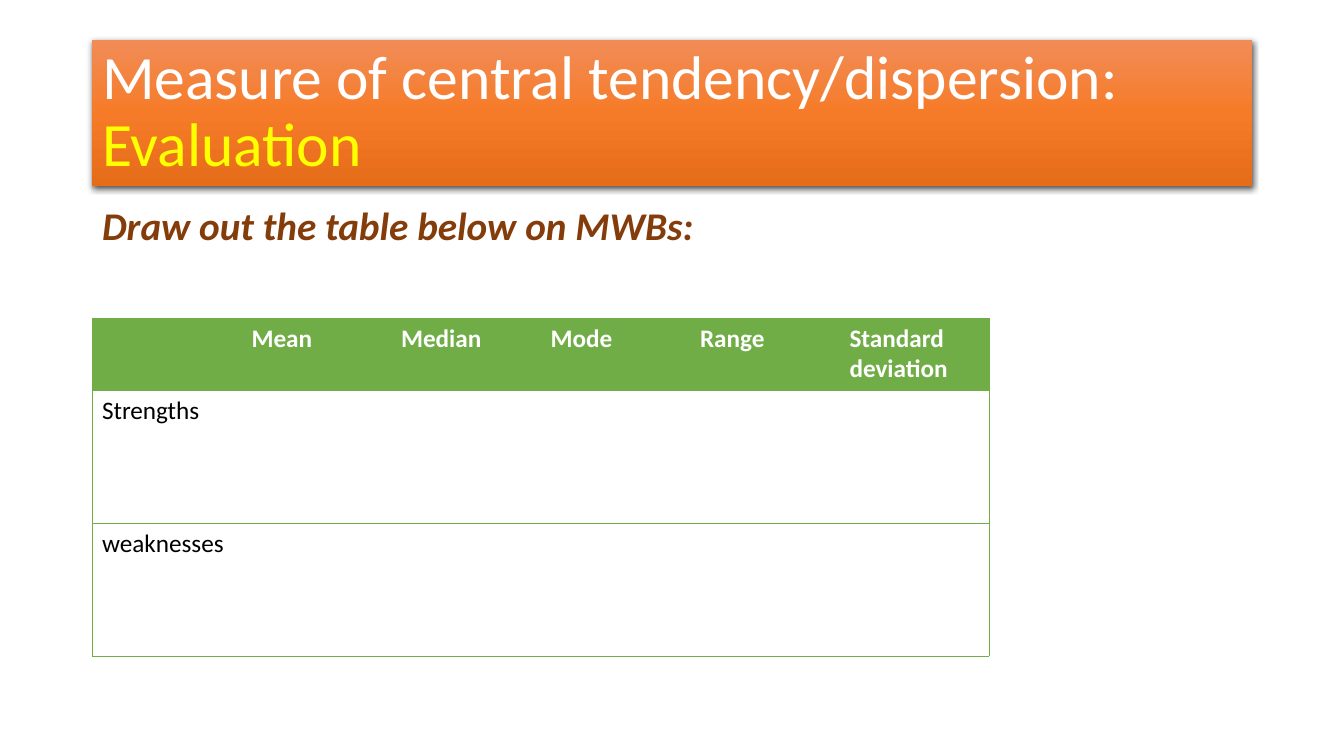
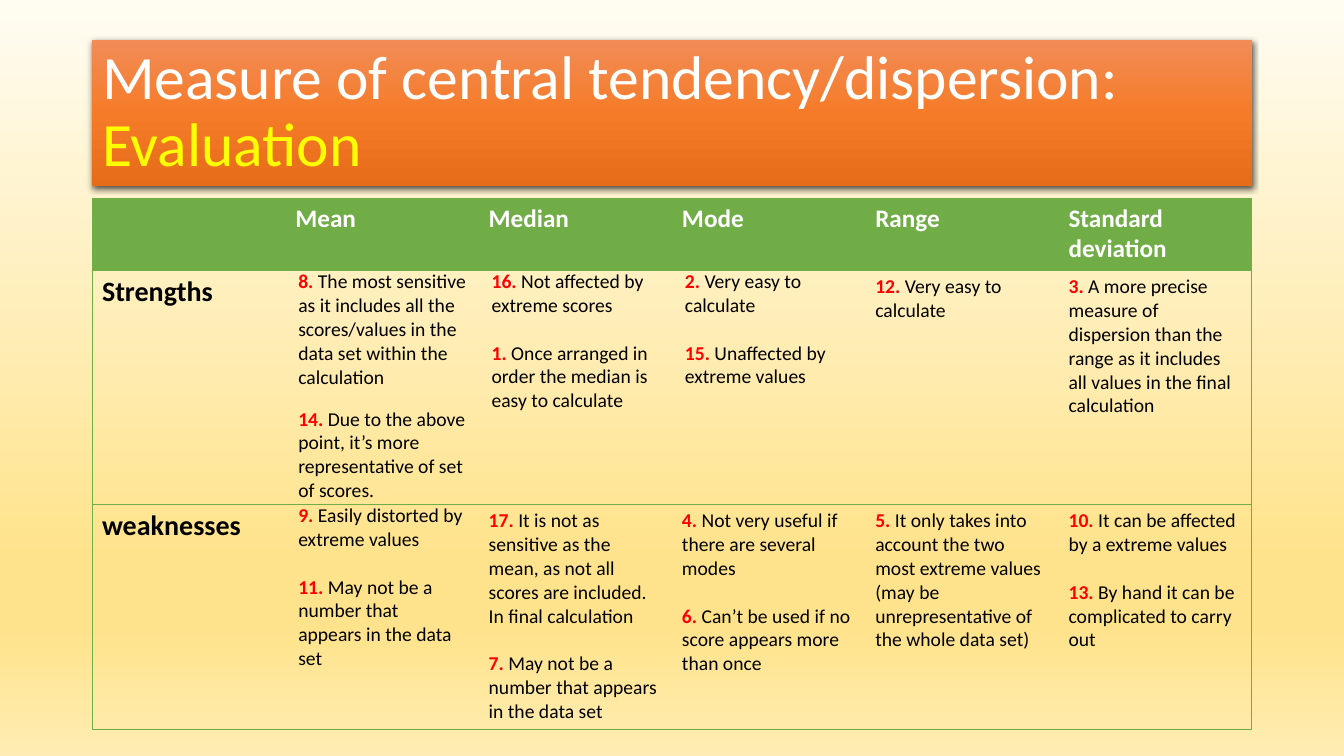
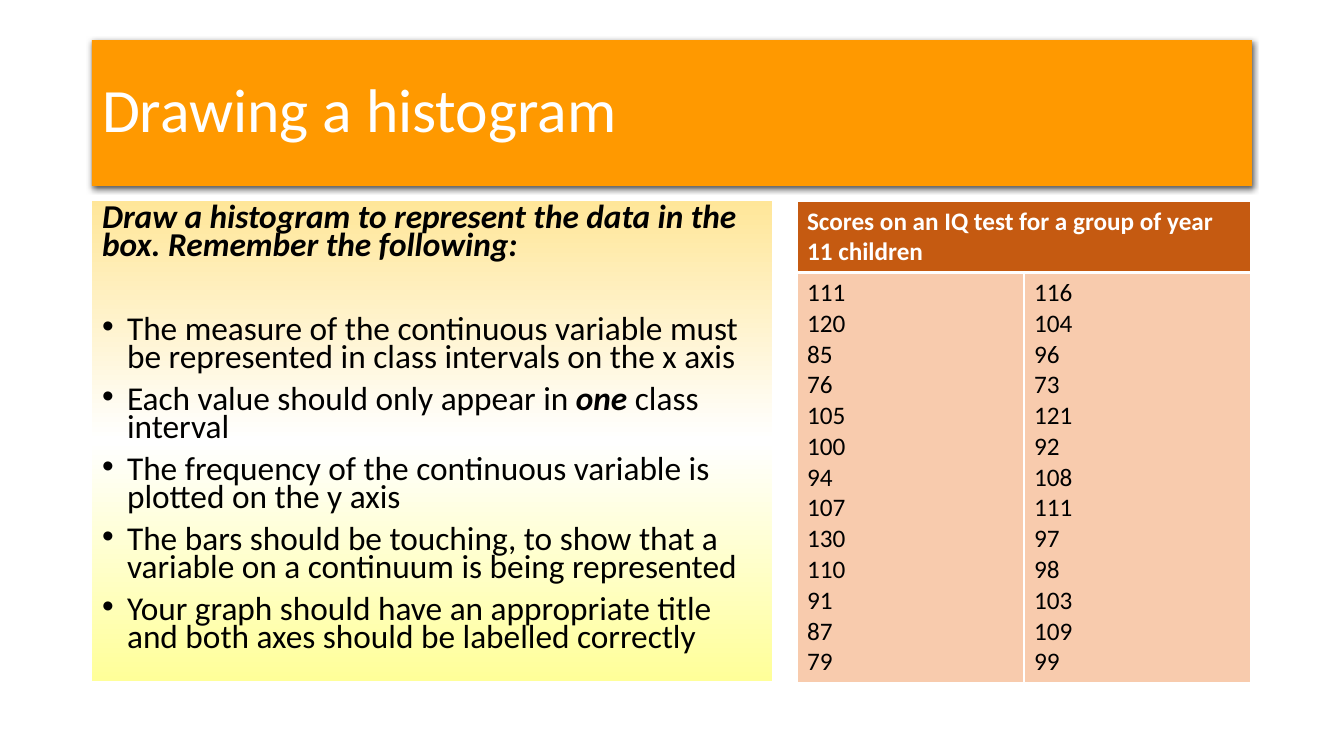
from pptx import Presentation
from pptx import util as u
from pptx.dml.color import RGBColor
from pptx.enum import text as t
from pptx.oxml import parse_xml
from pptx.oxml.ns import nsdecls, qn

PX = 914400 / 100.8
LEFT, WIDE = 92, 1160
WHITE = RGBColor(0xFF, 0xFF, 0xFF)
BLACK = RGBColor(0x00, 0x00, 0x00)
YELLOW = RGBColor(0xFF, 0xFF, 0x00)
RED = RGBColor(0xFF, 0x00, 0x00)
BROWN = RGBColor(0x84, 0x3C, 0x0B)
GREEN = RGBColor(0x70, 0xAD, 0x47)
AMBER = RGBColor(0xFF, 0x99, 0x00)
RUST = RGBColor(0xC5, 0x5A, 0x11)
PEACH = RGBColor(0xF8, 0xCB, 0xAD)
BAND = [(0, RGBColor(0xF1, 0x8C, 0x57)), (50, RGBColor(0xF6, 0x7B, 0x28)),
        (100, RGBColor(0xE5, 0x6C, 0x19))]
CREAM = [(0, RGBColor(0xFF, 0xFC, 0xF2)), (74, RGBColor(0xFF, 0xE3, 0x8C)),
         (83, RGBColor(0xFF, 0xE3, 0x8C)), (100, RGBColor(0xFF, 0xEC, 0xB2))]
LEMON = [(0, RGBColor(0xFF, 0xE6, 0x99)), (50, WHITE),
         (100, RGBColor(0xFF, 0xFF, 0x99))]

TOPIC = "Measure of central tendency/dispersion: "
HEADS = ["Mean", "Median", "Mode", "Range", "Standard deviation"]
SIDES = ["Strengths", "weaknesses"]
POINTS = [
    [
        (8, 13, ["8. The most sensitive as it includes all the scores/values "
                 "in the data set within the calculation",
                 "14. Due to the above point, it’s more representative of "
                 "set of scores."]),
        (8, 17, ["16. Not affected by extreme scores",
                 "1. Once arranged in order the median is easy to calculate"]),
        (8, 17, ["2. Very easy to calculate",
                 "15. Unaffected by extreme values"]),
        (None, 17, ["12. Very easy to calculate"]),
        (None, 17, ["3. A more precise measure of dispersion than the range as "
                    "it includes all values in the final calculation"]),
    ],
    [
        (14, 17, ["9. Easily distorted by extreme values",
                  "11. May not be a number that appears in the data set"]),
        (None, 17, ["17. It is not as sensitive as the mean, as not all scores "
                    "are included. In final calculation",
                    "7. May not be a number that appears in the data set"]),
        (None, 17, ["4. Not very useful if there are several modes",
                    "6. Can’t be used if no score appears more than once"]),
        (None, 17, ["5. It only takes into account the two most extreme values "
                    "(may be unrepresentative of the whole data set)"]),
        (None, 17, ["10. It can be affected by a extreme values",
                    "13. By hand it can be complicated to carry out"]),
    ],
]
RULES = [
    ["The measure of the continuous variable must be represented in class "
     "intervals on the x axis"],
    ["Each value should only appear in ", "one ", "class interval"],
    ["The frequency of the continuous variable is plotted on the y axis"],
    ["The bars should be touching, to show that a variable on a continuum is "
     "being represented"],
    ["Your graph should have an appropriate title and both axes should be "
     "labelled correctly"],
]
SCORES = [
    [111, 120, 85, 76, 105, 100, 94, 107, 130, 110, 91, 87, 79],
    [116, 104, 96, 73, 121, 92, 108, 111, 97, 98, 103, 109, 99],
]


def px(n):
    return u.Emu(round(n * PX))


def write(para, words, size=18, color=BLACK, bold=False, italic=False):
    run = para.add_run()
    run.text = words
    font = run.font
    font.name = "Calibri"
    font.size = u.Pt(size)
    font.color.rgb = color
    font.bold = bold
    font.italic = italic


def place(shape, left, top, width, height):
    shape.left, shape.top = px(left), px(top)
    shape.width, shape.height = px(width), px(height)
    shape.text_frame.auto_size = t.MSO_AUTO_SIZE.NONE


def fill(frame, items):
    for n, item in enumerate(items):
        yield frame.add_paragraph() if n else frame.paragraphs[0], item


def solid(item, color):
    item.fill.solid()
    item.fill.fore_color.rgb = color


def blend(item, stops):
    item.fill.gradient()
    item.fill.gradient_angle = 270
    ramp = next(item._element.iter(qn("a:gsLst")))
    for old in list(ramp):
        ramp.remove(old)
    for at, color in stops:
        ramp.append(parse_xml(
            f'<a:gs {nsdecls("a")} pos="{at * 1000}">'
            f'<a:srgbClr val="{color}"/></a:gs>'))


def shade(shape):
    shape._element.spPr.append(parse_xml(
        f'<a:effectLst {nsdecls("a")}><a:outerShdw blurRad="57150" '
        'dist="19050" dir="5400000" algn="ctr" rotWithShape="0">'
        '<a:srgbClr val="000000"><a:alpha val="63000"/></a:srgbClr>'
        '</a:outerShdw></a:effectLst>'))


def head(slide, words, accent=None):
    shape = slide.shapes.title
    place(shape, LEFT, 40, WIDE, 146)
    if accent:
        blend(shape, BAND)
    else:
        solid(shape, AMBER)
    shade(shape)
    shape.text_frame.vertical_anchor = t.MSO_ANCHOR.MIDDLE
    para = shape.text_frame.paragraphs[0]
    para.alignment = t.PP_ALIGN.LEFT
    para.line_spacing = 0.9
    write(para, words, size=44, color=WHITE)
    if accent:
        write(para, accent, size=44, color=YELLOW)


def style(para, space, before=10, bullet=False):
    para.line_spacing = space
    para.space_before = u.Pt(before)
    props = para._p.get_or_add_pPr()
    inset = px(25) if bullet else 0
    props.set("marL", str(inset))
    props.set("indent", str(-inset))
    mark = '<a:buChar {} char="•"/>' if bullet else "<a:buNone {}/>"
    props.append(parse_xml(mark.format(nsdecls("a"))))


def edge(cell, color, **sides):
    props = cell._tc.get_or_add_tcPr()
    names = [name for name in "LRTB" if name in sides]
    for spot, name in enumerate(names):
        width = u.Pt(sides[name])
        props.insert(spot, parse_xml(
            f'<a:ln{name} {nsdecls("a")} w="{width}"><a:solidFill>'
            f'<a:srgbClr val="{color}"/></a:solidFill></a:ln{name}>'))


def table(slide, left, top, width, rows, cols):
    frame = slide.shapes.add_table(
        len(rows), cols, px(left), px(top), px(width), px(sum(rows)))
    grid = frame.table
    plain = next(frame._element.iter(qn("a:tableStyleId")))
    plain.text = "{2D5ABB26-0587-4C30-8999-92F81FD0307C}"
    for row, height in zip(grid.rows, rows):
        row.height = px(height)
    for col in grid.columns:
        col.width = px(width / cols)
    return grid


def chart(slide, top, width, rows, **label):
    grid = table(slide, LEFT, top, width, rows, len(HEADS) + 1)
    last = len(HEADS)
    for r in range(len(rows)):
        for c in range(last + 1):
            cell = grid.cell(r, c)
            sides = {"T": 0.5, "B": 0.5}
            if c == 0:
                sides["L"] = 0.5
            if c == last:
                sides["R"] = 0.5
            if r == 0:
                solid(cell, GREEN)
            else:
                cell.fill.background()
            edge(cell, GREEN, **sides)
    for c, words in enumerate(HEADS, 1):
        para = grid.cell(0, c).text_frame.paragraphs[0]
        write(para, words, color=WHITE, bold=True)
    for r, words in enumerate(SIDES, 1):
        write(grid.cell(r, 0).text_frame.paragraphs[0], words, **label)
    return grid


def answer(cell, inset, gap, points):
    if inset:
        cell.margin_left, cell.margin_right = px(13), px(inset)
        cell.margin_top = cell.margin_bottom = 0
    for para, point in fill(cell.text_frame, points):
        mark, words = point.split(" ", 1)
        if point != points[0]:
            para.space_before = u.Pt(gap)
        write(para, mark + " ", size=14, color=RED, bold=True)
        write(para, words, size=14)


def task(slide):
    head(slide, TOPIC, "Evaluation")
    body = slide.placeholders[1]
    place(body, LEFT, 202, WIDE, 480)
    para = body.text_frame.paragraphs[0]
    style(para, 0.9)
    write(para, "Draw out the table below on MWBs:",
          size=28, color=BROWN, bold=True, italic=True)
    chart(slide, 318, 897, [72, 133, 133])


def review(slide):
    blend(slide.background, CREAM)
    head(slide, TOPIC, "Evaluation")
    grid = chart(slide, 198, WIDE, [72, 234, 225], size=20, bold=True)
    for r, row in enumerate(POINTS, 1):
        for c, item in enumerate(row, 1):
            answer(grid.cell(r, c), *item)


def rules(slide):
    body = slide.placeholders[1]
    place(body, LEFT, 201, 680, 480)
    blend(body, LEMON)
    frame = body.text_frame
    para = frame.paragraphs[0]
    style(para, 0.7)
    write(para, "Draw a histogram to represent the data in the box. "
          "Remember the following:", size=23.8, bold=True, italic=True)
    for n, parts in enumerate(RULES):
        para = frame.add_paragraph()
        style(para, 0.7, before=10 if n else 40, bullet=True)
        for part in parts:
            stress = part == "one "
            write(para, part, size=23.8, bold=stress, italic=stress)


def scores(slide):
    grid = table(slide, 797, 201, 454, [71, 409], 2)
    top = grid.cell(0, 0)
    top.merge(grid.cell(0, 1))
    write(top.text_frame.paragraphs[0],
          "Scores on an IQ test for a group of year 11 children",
          color=WHITE, bold=True)
    for c, column in enumerate(SCORES):
        solid(grid.cell(0, c), RUST)
        edge(grid.cell(0, c), WHITE, L=1, R=1, T=1, B=3)
        cell = grid.cell(1, c)
        solid(cell, PEACH)
        edge(cell, WHITE, L=1, R=1, T=3, B=1)
        for para, value in fill(cell.text_frame, column):
            write(para, str(value))


def graph(slide):
    head(slide, "Drawing a histogram")
    rules(slide)
    scores(slide)


def main():
    deck = Presentation()
    deck.slide_width, deck.slide_height = px(1344), px(756)
    for layout, build in [(1, task), (5, review), (1, graph)]:
        build(deck.slides.add_slide(deck.slide_layouts[layout]))
    deck.save("out.pptx")


if __name__ == "__main__":
    main()
